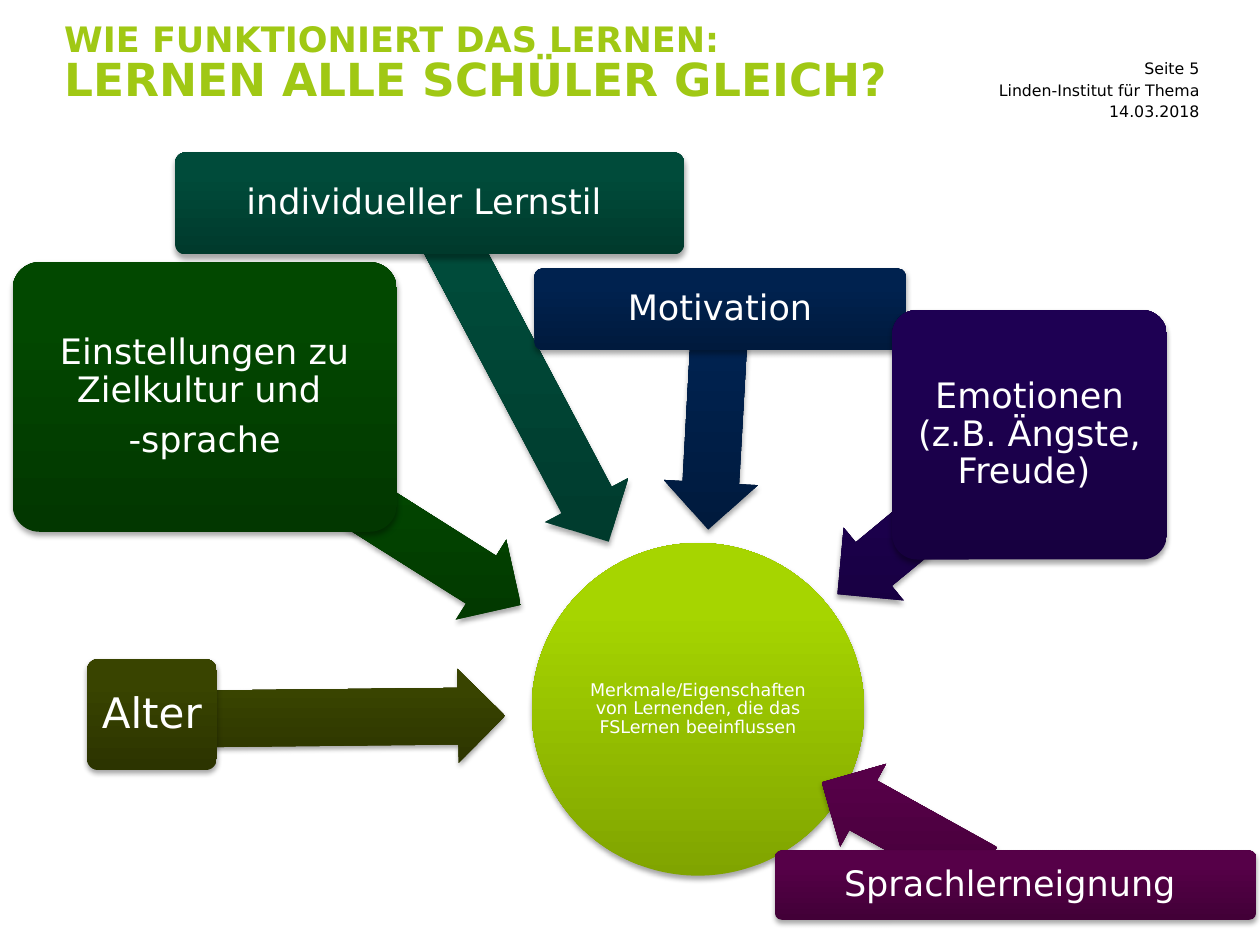
from lxml import etree
from pptx import Presentation
from pptx.dml.color import RGBColor as RGB
from pptx.enum.shapes import MSO_SHAPE as Shape
from pptx.enum.text import MSO_ANCHOR as Anchor, MSO_AUTO_SIZE as Auto, PP_ALIGN as Align
from pptx.oxml.ns import qn
from pptx.util import Pt

FONT = "DejaVu Sans"
# Fills are pairs: dark at the foot, light at the top.
HEX = {
    "title": "A0C814", "meta": "000000", "text": "FFFFFF", "shadow": "000000",
    "lime": ("80A400", "A6D500"), "olive": ("2C3400", "394400"),
    "green": ("023700", "024800"), "teal": ("003A2C", "004B3A"),
    "navy": ("001A3D", "00224F"), "violet": ("170040", "1E0053"),
    "plum": ("420037", "560048"),
}
THICK = 54

# Fill, arrow (left, top, length), arrow angle, box, text size, paragraphs
TRAITS = [
    ("olive", (89.3, 383, 199.4), 179.4, (49.7, 376.6, 74.2, 63.4), 24, ["Alter"]),
    ("green", (146.9, 275, 163.4), 212.3, (7.2, 149.8, 219.6, 154.1), 20,
     ["Einstellungen zu Zielkultur und ", "-sprache"]),
    ("teal", (187.2, 185.8, 218.9), 242.1, (100.1, 87.1, 290.9, 58.3), 20,
     ["individueller Lernstil "]),
    ("navy", (344.9, 212.4, 126.7), 273.2, (305.3, 153.4, 212.4, 46.8), 20,
     ["Motivation"]),
    ("violet", (462.2, 267.1, 142.6), 320.4, (509.8, 177.1, 157, 142.6), 20,
     ["Emotionen (z.B. Ängste, Freude) "]),
    ("plum", (463, 445.7, 105.8), 29, (442.8, 486, 275, 39.6), 20,
     ["Sprachlerneignung "]),
]


def add_run(para, text, size, color, bold=False):
    run = para.add_run()
    run.text = text
    font = run.font
    font.name, font.size, font.bold = FONT, Pt(size), bold
    font.color.rgb = RGB.from_string(HEX[color])


def set_frame(frame, inset, anchor):
    frame.word_wrap = True
    frame.auto_size = Auto.NONE
    frame.vertical_anchor = anchor
    frame.margin_left = frame.margin_right = Pt(inset)
    frame.margin_top = frame.margin_bottom = Pt(inset)


def add_shadow(shape):
    """Cast a soft shadow straight down."""
    shape.shadow.inherit = False
    effects = shape._element.spPr.find(qn("a:effectLst"))
    outer = etree.SubElement(effects, qn("a:outerShdw"), blurRad=str(Pt(3.1)),
                             dist=str(Pt(1.8)), dir="5400000", rotWithShape="0")
    color = etree.SubElement(outer, qn("a:srgbClr"), val=HEX["shadow"])
    etree.SubElement(color, qn("a:alpha"), val="35000")


def add_solid(slide, kind, box, color):
    """Add a borderless shape whose gradient stays upright when it turns."""
    shape = slide.shapes.add_shape(kind, *map(Pt, box))
    shape.line.fill.background()
    shape.fill.gradient()
    shape.fill.gradient_angle = 90
    for stop, place, tone in zip(shape.fill.gradient_stops, (0, 0.8), HEX[color]):
        stop.position = place
        stop.color.rgb = RGB.from_string(tone)
    shape._element.spPr.find(qn("a:gradFill")).set("rotWithShape", "0")
    add_shadow(shape)
    return shape


def add_label(shape, texts, size, inset):
    frame = shape.text_frame
    set_frame(frame, inset, Anchor.MIDDLE)
    for i, text in enumerate(texts):
        para = frame.add_paragraph() if i else frame.paragraphs[0]
        para.alignment = Align.CENTER
        para.line_spacing = 0.9
        para.space_after = Pt(0.35 * size)
        add_run(para, text, size, "text")


def add_title(slide, box):
    title = slide.shapes.title
    title.left, title.top, title.width, title.height = map(Pt, box)
    set_frame(title.text_frame, 0, Anchor.TOP)
    para = title.text_frame.paragraphs[0]
    para.alignment = Align.LEFT
    para.line_spacing = 0.85
    para.space_before = Pt(0)
    add_run(para, "WIE FUNKTIONIERT DAS LERNEN: ", 20, "title", True)
    add_run(para, "LERNEN ALLE SCHÜLER GLEICH?", 26, "title", True)


def add_meta(slide, box, lines):
    left, top, width, height = box
    step = height / len(lines)
    for i, text in enumerate(lines):
        area = left, top + i * step, width, step
        frame = slide.shapes.add_textbox(*map(Pt, area)).text_frame
        set_frame(frame, 0, Anchor.MIDDLE)
        para = frame.paragraphs[0]
        para.alignment = Align.RIGHT
        add_run(para, text, 9, "meta")


def add_hub(slide, box):
    hub = add_solid(slide, Shape.OVAL, box, "lime")
    add_label(hub, ["Merkmale/Eigenschaften von Lernenden, die das "
                    "FSLernen beeinflussen"], 10, 0.9)


def add_trait(slide, color, shaft, angle, box, size, texts):
    arrow = add_solid(slide, Shape.LEFT_ARROW, (*shaft, THICK), color)
    arrow.adjustments[0], arrow.adjustments[1] = 0.6, 0.5
    arrow.rotation = angle
    card = add_solid(slide, Shape.ROUNDED_RECTANGLE, box, color)
    card.adjustments[0] = 0.1
    add_label(card, texts, size, 0.15 * size)


def main():
    deck = Presentation()
    deck.slide_width, deck.slide_height = Pt(720), Pt(540)
    slide = deck.slides.add_slide(deck.slide_layouts[5])
    add_title(slide, (36.7, 13.7, 481.7, 49.7))
    add_hub(slide, (303.8, 310.3, 190.1, 190.1))
    for trait in TRAITS:
        add_trait(slide, *trait)
    add_meta(slide, (527, 32.8, 158.4, 37.2),
             ["Seite 5", "Linden-Institut für Thema", "14.03.2018"])
    deck.save("out.pptx")


if __name__ == "__main__":
    main()
